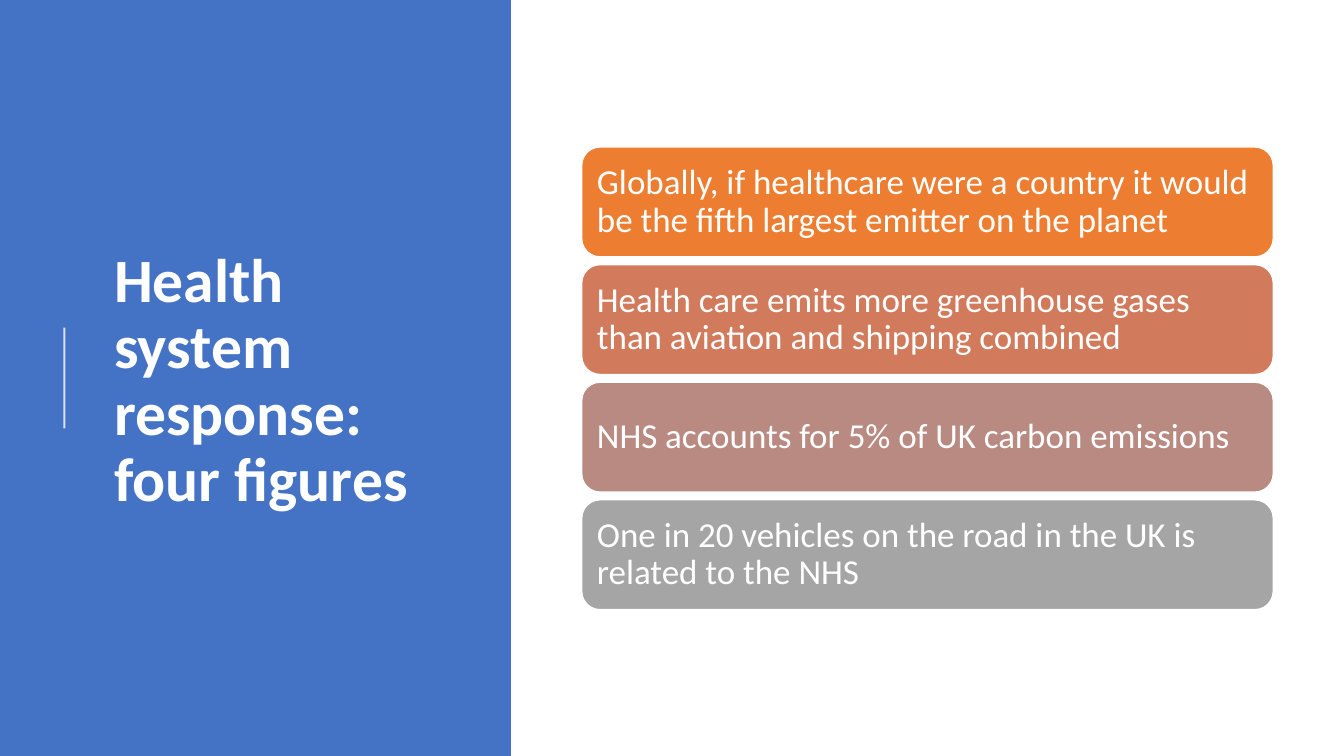
from lxml.etree import SubElement
from pptx import Presentation
from pptx.dml.color import RGBColor
from pptx.enum.shapes import MSO_CONNECTOR, MSO_SHAPE
from pptx.enum.text import MSO_ANCHOR, PP_ALIGN
from pptx.oxml.ns import qn
from pptx.util import Pt

WHITE = RGBColor(0xFF, 0xFF, 0xFF)
BLUE = RGBColor(0x44, 0x72, 0xC4)
FONT = "Calibri"

TITLE = "Health system response: four figures"
CARDS = [
    ("Globally, if healthcare were a country it would be the fifth largest "
     "emitter on the planet", RGBColor(0xED, 0x7D, 0x31)),
    ("Health care emits more greenhouse gases than aviation and shipping "
     "combined", RGBColor(0xD1, 0x7B, 0x5C)),
    ("NHS accounts for 5% of UK carbon emissions", RGBColor(0xB9, 0x8A, 0x82)),
    ("One in 20 vehicles on the road in the UK is related to the NHS",
     RGBColor(0xA5, 0xA5, 0xA5)),
]

SLIDE_W, SLIDE_H = 960, 540
PANEL_W = 365
CARD_X, CARD_Y, CARD_W, CARD_H = 415.5, 105, 494, 78.5
CARD_PITCH = 84
RULE_X, RULE_TOP, RULE_BOTTOM = 46, 234, 306


def add_block(s, kind, x, y, w, h, fill):
    sp = s.shapes.add_shape(kind, Pt(x), Pt(y), Pt(w), Pt(h))
    sp.shadow.inherit = False
    sp.fill.solid()
    sp.fill.fore_color.rgb = fill
    sp.line.fill.background()
    return sp


def write(sp, text, size, bold=False):
    tf = sp.text_frame
    tf.word_wrap = True
    tf.vertical_anchor = MSO_ANCHOR.MIDDLE
    p = tf.paragraphs[0]
    p.alignment = PP_ALIGN.LEFT
    p.line_spacing = 0.9
    r = p.add_run()
    r.text = text
    r.font.name = FONT
    r.font.size = Pt(size)
    r.font.bold = bold
    r.font.color.rgb = WHITE
    return tf


def add_rule(s):
    """Draw the thin, slightly transparent line beside the title."""
    line = s.shapes.add_connector(MSO_CONNECTOR.STRAIGHT, Pt(RULE_X),
                                  Pt(RULE_BOTTOM), Pt(RULE_X), Pt(RULE_TOP))
    line.line.width = Pt(1.5)
    line.line.color.rgb = WHITE
    sp_pr = line._element.spPr
    SubElement(sp_pr.find(".//" + qn("a:srgbClr")), qn("a:alpha"), val="80000")
    SubElement(sp_pr, qn("a:effectLst"))


def main():
    prs = Presentation()
    prs.slide_width, prs.slide_height = Pt(SLIDE_W), Pt(SLIDE_H)
    s = prs.slides.add_slide(prs.slide_layouts[6])

    add_block(s, MSO_SHAPE.RECTANGLE, 0, 0, PANEL_W, SLIDE_H, BLUE)
    title = s.shapes.add_textbox(Pt(74.5), Pt(56), Pt(265.5), Pt(433.5))
    write(title, TITLE, 44, bold=True)
    add_rule(s)

    for i, (text, fill) in enumerate(CARDS):
        card = add_block(s, MSO_SHAPE.ROUNDED_RECTANGLE, CARD_X,
                         CARD_Y + i * CARD_PITCH, CARD_W, CARD_H, fill)
        card.line.color.rgb = WHITE
        card.line.width = Pt(1)
        tf = write(card, text, 25)
        tf.margin_left = tf.margin_right = Pt(7.2)
        tf.margin_top = tf.margin_bottom = Pt(7.2)

    prs.save("out.pptx")


if __name__ == "__main__":
    main()
